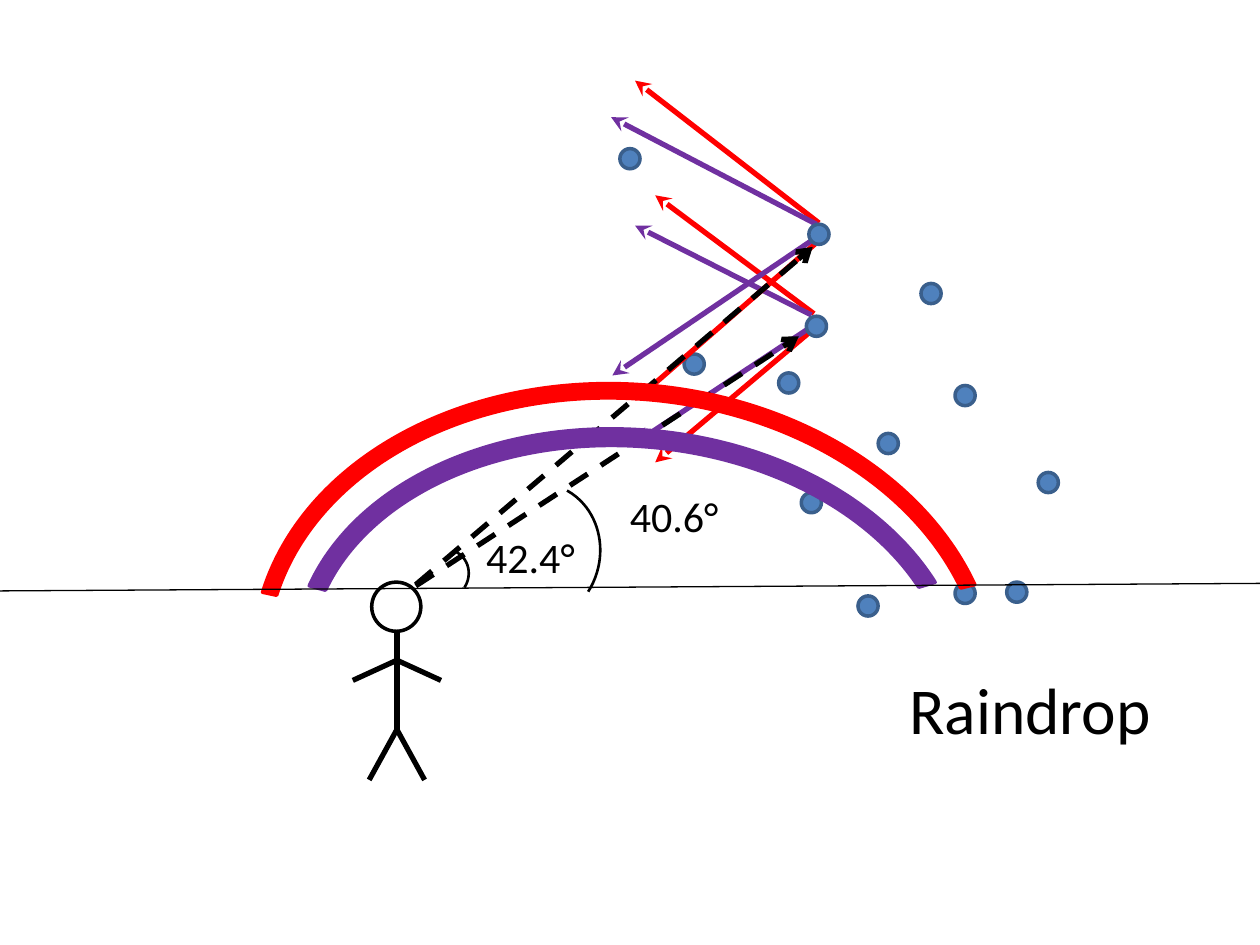
from lxml.etree import SubElement
from pptx import Presentation
from pptx.dml.color import RGBColor
from pptx.enum.dml import MSO_LINE
from pptx.enum.shapes import MSO_CONNECTOR, MSO_SHAPE
from pptx.enum.text import MSO_ANCHOR, PP_ALIGN
from pptx.oxml.ns import qn
from pptx.util import Inches, Pt

COLORS = {
    "black": "000000",
    "red": "FF0000",
    "violet": "7030A0",
    "drop": "4F81BD",
    "drop_edge": "3A5F8C",
}
DROP_SIZE = 0.16

# Left and top of each drop
SCATTERED_DROPS = [
    (6.18, 2.96), (6.36, 3.91), (7.58, 3.06), (8.24, 3.75), (6.97, 3.44),
    (6.81, 4.73), (7.99, 4.62), (5.43, 2.81), (7.58, 4.63), (7.31, 2.25),
    (4.92, 1.18),
]
REFRACTING_DROPS = [(6.42, 1.78), (6.4, 2.51)]

# Start, end and colour of the light rays leaving the two refracting drops
LIGHT_RAYS = [
    ((6.46, 2.49), (5.2, 1.55), "red"),
    ((6.47, 2.6), (5.2, 3.67), "red"),
    ((6.44, 2.5), (5.04, 1.79), "violet"),
    ((6.46, 2.58), (5.05, 3.51), "violet"),
    ((6.5, 1.77), (5.04, 0.64), "red"),
    ((6.51, 1.9), (5.04, 3.18), "red"),
    ((6.48, 1.78), (4.85, 0.93), "violet"),
    ((6.5, 1.87), (4.86, 2.98), "violet"),
]
SIGHT_LINES = [((3.3, 4.65), (6.34, 2.67)), ((3.3, 4.64), (6.45, 1.96))]

# Box, arc limits with thickness, and colour of each band
RAINBOW_BANDS = [
    ((2, 3.05, 5.92, 4.55), (112.471, 204.798, 0.025), "red"),
    ((2.32, 3.41, 5.36, 3.88), (114.357, 203.08, 0.034), "violet"),
]
# Arc box, label text and label position
ANGLES = [
    ((3.34, 4.37, 0.39, 0.37), "42.4°", (3.76, 4.17)),
    ((3.68, 3.88, 1.13, 1.03), "40.6°", (4.9, 3.84)),
]


def color(name):
    return RGBColor.from_string(COLORS[name])


def add_shape(slide, kind, box, line, width=2, fill=None, rotation=0,
              adjustments=(), mirrored=False):
    shape = slide.shapes.add_shape(kind, *map(Inches, box))
    shape.shadow.inherit = False
    shape.rotation = rotation
    for index, value in enumerate(adjustments):
        shape.adjustments[index] = value
    if fill:
        shape.fill.solid()
        shape.fill.fore_color.rgb = color(fill)
    else:
        shape.fill.background()
    shape.line.color.rgb = color(line)
    shape.line.width = Pt(width)
    if mirrored:
        shape._element.spPr.get_or_add_xfrm().set("flipH", "1")
    return shape


def add_line(slide, start, end, line="black", width=3, dashed=False, arrow=None):
    connector = slide.shapes.add_connector(
        MSO_CONNECTOR.STRAIGHT, *map(Inches, (*start, *end)))
    connector.line.color.rgb = color(line)
    connector.line.width = Pt(width)
    if dashed:
        connector.line.dash_style = MSO_LINE.DASH
    if arrow:
        SubElement(connector.line._get_or_add_ln(), qn("a:tailEnd"), type=arrow)
    SubElement(connector._element.spPr, qn("a:effectLst"))
    return connector


def add_text(slide, text, box, size=24, align=PP_ALIGN.LEFT, anchor=MSO_ANCHOR.TOP):
    text_box = slide.shapes.add_textbox(*map(Inches, box))
    frame = text_box.text_frame
    frame.word_wrap = True
    frame.vertical_anchor = anchor
    paragraph = frame.paragraphs[0]
    paragraph.alignment = align
    run = paragraph.add_run()
    run.text = text
    run.font.name = "Calibri"
    run.font.size = Pt(size)
    run.font.color.rgb = color("black")
    return text_box


def add_observer(slide):
    center, shoulder, hip = 3.15, 5.24, 5.79
    add_shape(slide, MSO_SHAPE.OVAL, (2.95, 4.62, 0.39, 0.39), "black")
    add_line(slide, (center, 5.01), (center, hip))
    for side in (-1, 1):
        add_line(slide, (center, hip), (center + side * 0.22, 6.19))
        add_line(slide, (center + side * 0.35, 5.4), (center, shoulder))


def add_drops(slide, positions):
    for left, top in positions:
        add_shape(slide, MSO_SHAPE.OVAL, (left, top, DROP_SIZE, DROP_SIZE),
                  "drop_edge", fill="drop")


def add_angle(slide, arc_box, label, position):
    add_shape(slide, MSO_SHAPE.ARC, arc_box, "black", width=1.5, rotation=106.8,
              adjustments=(150.861, 209.891), mirrored=True)
    add_text(slide, label, (*position, 1.24, 0.5))


def main():
    presentation = Presentation()
    presentation.slide_width = Inches(10)
    presentation.slide_height = Inches(7.5)
    slide = presentation.slides.add_slide(presentation.slide_layouts[6])

    # Observer and rain
    add_observer(slide)
    add_drops(slide, SCATTERED_DROPS)
    add_text(slide, "Raindrop", (7.05, 5.2, 2.25, 0.85), size=37.4,
             align=PP_ALIGN.CENTER, anchor=MSO_ANCHOR.MIDDLE)

    # Refracted light and lines of sight
    for start, end, ray_color in LIGHT_RAYS:
        add_line(slide, start, end, ray_color, arrow="stealth")
    for start, end in SIGHT_LINES:
        add_line(slide, start, end, dashed=True, arrow="arrow")
    add_drops(slide, REFRACTING_DROPS)

    # Rainbow over the horizon
    for box, limits, band_color in RAINBOW_BANDS:
        add_shape(slide, MSO_SHAPE.BLOCK_ARC, box, band_color, fill=band_color,
                  rotation=4.8, adjustments=limits)
    add_line(slide, (10, 4.63), (0, 4.69), width=0.75)

    # Viewing angles
    for arc_box, label, position in ANGLES:
        add_angle(slide, arc_box, label, position)

    presentation.save("out.pptx")


if __name__ == "__main__":
    main()
